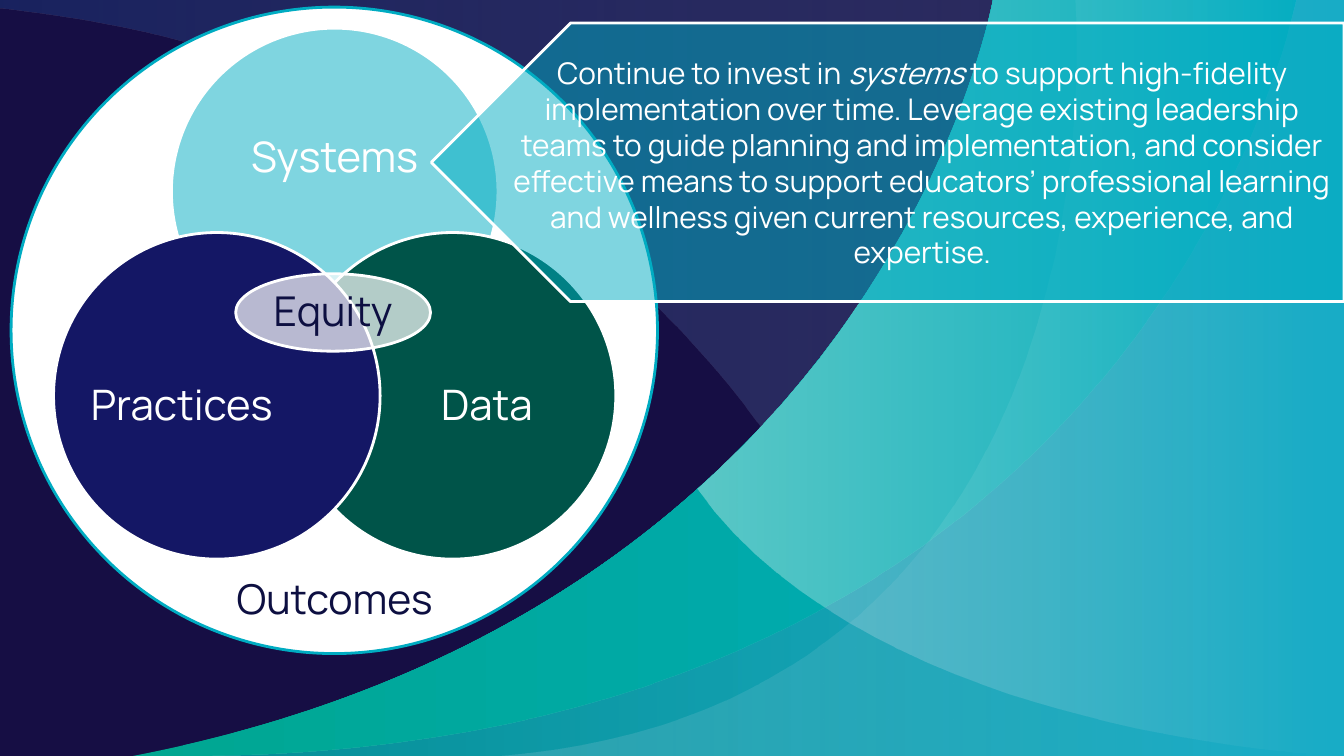
from lxml import etree
from pptx import Presentation
from pptx.dml.color import RGBColor
from pptx.enum.shapes import MSO_SHAPE
from pptx.enum.text import MSO_ANCHOR, PP_ALIGN
from pptx.oxml.ns import qn
from pptx.util import Cm, Pt

OVAL, PENTAGON = MSO_SHAPE.OVAL, MSO_SHAPE.PENTAGON
TOP, MIDDLE = MSO_ANCHOR.TOP, MSO_ANCHOR.MIDDLE
CENTER = PP_ALIGN.CENTER
FONT = "Manrope"
WHITE, NAVY, TEAL = "FFFFFF", "0D0F41", "00ACC2"
RIGHT, BOTTOM, ABOVE = 33.87, 19.05, -0.08


def paint(color, hex_code, opacity=100):
    color.rgb = RGBColor.from_string(hex_code)
    if opacity < 100:
        srgb = color._xFill.find(".//" + qn("a:srgbClr"))
        etree.SubElement(srgb, qn("a:alpha")).set("val", str(opacity * 1000))


def write(frame, pieces, size, hex_code, anchor):
    frame.word_wrap = True
    frame.vertical_anchor = anchor
    paragraph = frame.paragraphs[0]
    paragraph.alignment = CENTER
    for text, italic in pieces:
        run = paragraph.add_run()
        run.text = text
        run.font.name, run.font.size, run.font.italic = FONT, Pt(size), italic
        paint(run.font.color, hex_code)


deck = Presentation()
deck.slide_width, deck.slide_height = Cm(RIGHT), Cm(BOTTOM)
slide = deck.slides.add_slide(deck.slide_layouts[6])
slide.background.fill.solid()
paint(slide.background.fill.fore_color, "160E44")

corner = [(RIGHT, BOTTOM), (RIGHT, ABOVE)]
ridge = [(25.04, ABOVE), (25.04, ABOVE, 23.9, 6.68, 17.58, 12.32)]
haze = [("114CA0", 29), ("8AAFDC", 18)]
waves = [
    ([(23.98, 21.39), (23.98, 21.39, 20.45, 0, -4.24, 0), (25.17, 0), (25.17, 21.39)], haze),
    ([(RIGHT, ABOVE), (RIGHT, BOTTOM), (3.35, BOTTOM),
      (22.43, 15.32, 26.24, ABOVE, 26.24, ABOVE)], [("12102F", 54)]),
    ([(3.35, BOTTOM)] + corner + ridge + [(14.35, 15.21, 9.78, 17.81, 3.35, BOTTOM)],
     [("00A791", 100), (TEAL, 100)]),
    ([(17.58, 12.32), (22.07, 18.64, RIGHT, BOTTOM, RIGHT, BOTTOM), (RIGHT, ABOVE)] + ridge,
     [(WHITE, 36), (WHITE, 0)]),
    ([(27.08, ABOVE), (27.08, ABOVE, 28.68, 17.75, 12.55, BOTTOM)] + corner,
     [(WHITE, 18), (WHITE, 0)]),
    ([(32.66, ABOVE), (32.66, ABOVE, 29.13, BOTTOM, 4.52, BOTTOM)] + corner, haze),
]
for outline, tints in waves:
    ends = [(Cm(step[-2]), Cm(step[-1])) for step in outline]
    builder = slide.shapes.build_freeform(*ends[0])
    builder.add_line_segments(ends[1:], close=True)
    wave = builder.convert_to_shape()
    segments = list(wave._element.iter(qn("a:lnTo")))
    for segment, step in zip(segments, outline[1:]):
        if len(step) == 6:
            curve = etree.Element(qn("a:cubicBezTo"))
            for x, y in zip(step[::2], step[1::2]):
                point = etree.SubElement(curve, qn("a:pt"))
                point.set("x", str(Cm(x) - wave.left))
                point.set("y", str(Cm(y) - wave.top))
            segment.getparent().replace(segment, curve)
    wave.shadow.inherit = False
    wave.line.fill.background()
    if len(tints) == 1:
        wave.fill.solid()
        paint(wave.fill.fore_color, *tints[0])
    else:
        wave.fill.gradient()
        wave.fill.gradient_angle = 0
        for stop, tint in zip(wave.fill.gradient_stops, tints):
            paint(stop.color, *tint)

advice = [
    ("Continue to invest in ", False),
    ("systems", True),
    (" to support high-fidelity implementation over time. Leverage existing leadership teams "
     "to guide planning and implementation, and consider effective means to support educators’ "
     "professional learning and wellness given current resources, experience, and expertise.", False),
]
figures = [
    (OVAL, (0.28, 0.18, 16.29, 16.29), WHITE, 100, TEAL, "Outcomes", (4.5, 14.33, 7.87, 1.5), 29.33, NAVY),
    (OVAL, (4.32, 0.71, 8.23, 8.23), TEAL, 50, WHITE, "Systems", (5.41, 2.16, 6.05, 3.71), 30, WHITE),
    (OVAL, (7.29, 5.86, 8.23, 8.23), "005449", 100, WHITE, "Data", (9.8, 7.99, 4.95, 4.52), 30, WHITE),
    (OVAL, (1.35, 5.86, 8.23, 8.23), "141765", 100, WHITE, "Practices", (2.11, 7.99, 4.95, 4.52), 30, WHITE),
    (OVAL, (5.94, 6.9, 4.91, 1.95), WHITE, 70, WHITE, "Equity", None, 29.33, NAVY),
    (PENTAGON, (10.87, 0.58, 23, 7.02), TEAL, 50, WHITE, advice, None, 21.33, WHITE),
]
for preset, box, fill, opacity, edge, words, label_box, size, ink in figures:
    figure = slide.shapes.add_shape(preset, *map(Cm, box))
    figure.shadow.inherit = False
    figure.fill.solid()
    paint(figure.fill.fore_color, fill, opacity)
    figure.line.width = Pt(2)
    paint(figure.line.color, edge)
    if words is advice:
        figure._element.spPr.find(qn("a:xfrm")).set("flipH", "1")
        write(figure.text_frame, advice, size, ink, MIDDLE)
        continue
    holder = slide.shapes.add_textbox(*map(Cm, label_box)) if label_box else figure
    frame = holder.text_frame
    frame.margin_left = frame.margin_right = frame.margin_top = frame.margin_bottom = 0
    write(frame, [(words, False)], size, ink, MIDDLE if label_box else TOP)
    if size == 30:
        frame.paragraphs[0].line_spacing = 0.9

deck.save("out.pptx")
